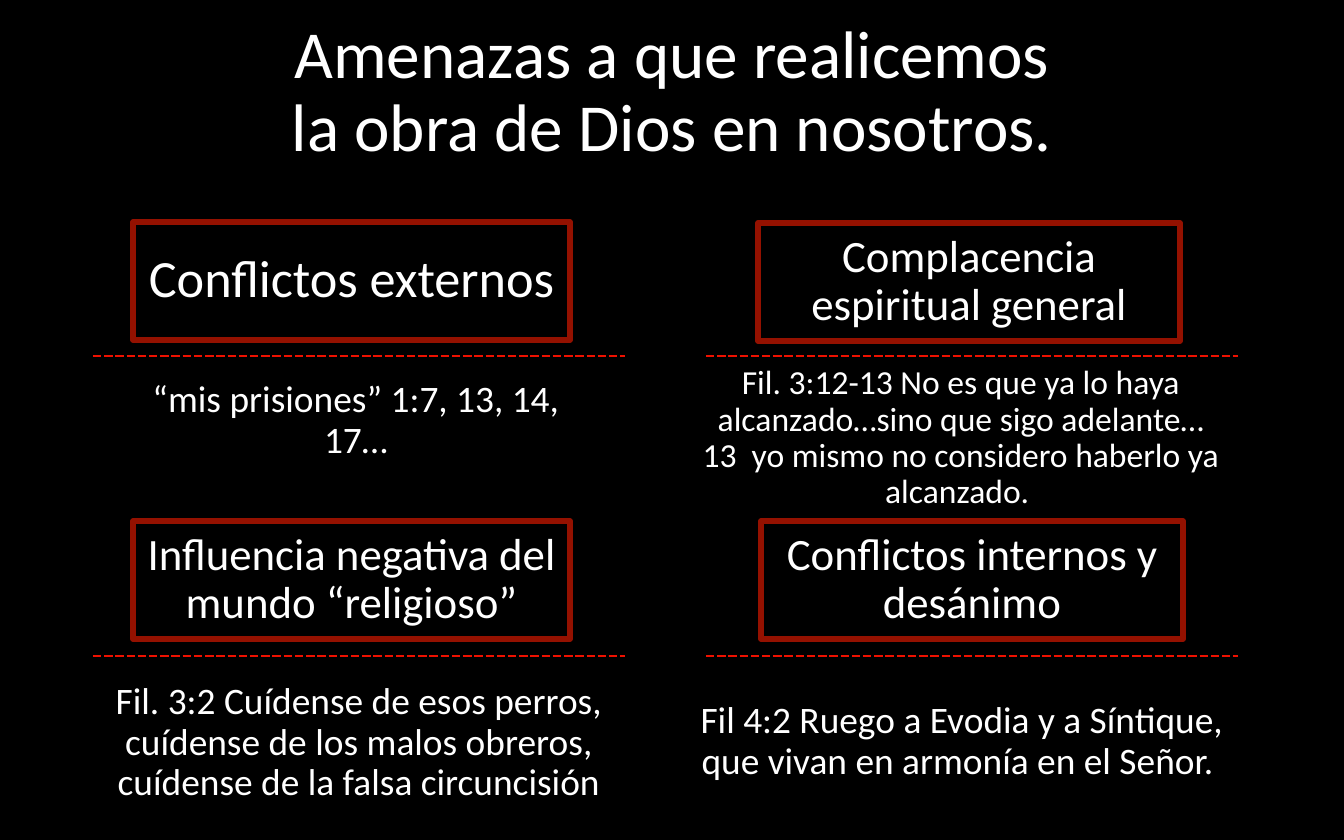
import dataclasses

import pptx
import pptx.dml.color
import pptx.enum.dml
import pptx.enum.shapes
import pptx.enum.text
import pptx.oxml
import pptx.oxml.ns
import pptx.util

EMU_PER_PX = 914400 / 134.4


@dataclasses.dataclass(frozen=True)
class Theme:
    font: str = "Calibri"
    background: str = "000000"
    text: str = "FFFFFF"
    frame: str = "941100"
    divider: str = "EE1100"
    title_size: int = 36
    frame_width: float = 3
    divider_width: float = 1.5
    line_spacing: float = 0.9
    space_before: float = 7.5


THEME = Theme()
DIVIDER_LENGTH = 532
HEADING_HEIGHT = 118

# heading and verse: (text, type size, (left, top, width[, height]));
# divider: (left, top)
THREATS = [
    {
        "heading": ("Conflictos externos", 28, (133, 222, 437)),
        "divider": (93, 356),
        "verse": (["“mis prisiones” 1:7, 13, 14, 17…"], 20, (106, 366, 500, 110)),
    },
    {
        "heading": ("Complacencia espiritual general", 24, (758, 223, 422)),
        "divider": (706, 356),
        "verse": (
            [
                "Fil. 3:12-13 No es que ya lo haya alcanzado…sino que sigo adelante…",
                "13  yo mismo no considero haberlo ya alcanzado. ",
            ],
            18,
            (685, 364, 552, 149),
        ),
    },
    {
        "heading": ("Influencia negativa del mundo “religioso”", 24, (133, 521, 437)),
        "divider": (93, 656),
        "verse": (
            [
                "Fil. 3:2 Cuídense de esos perros, cuídense de los malos obreros, "
                "cuídense de la falsa circuncisión"
            ],
            20,
            (93, 665, 532, 156),
        ),
    },
    {
        "heading": ("Conflictos internos y desánimo", 24, (761, 521, 422)),
        "divider": (706, 656),
        "verse": (
            ["Fil 4:2 Ruego a Evodia y a Síntique, que vivan en armonía en el Señor. "],
            20,
            (685, 664, 554, 156),
        ),
    },
]


def px(length):
    return pptx.util.Emu(round(length * EMU_PER_PX))


def rgb(value):
    return pptx.dml.color.RGBColor.from_string(value)


def apply(target, formats):
    for attribute, value in formats.items():
        setattr(target, attribute, value)


def write(frame, paragraphs, size, space_before=0):
    """Fill a text frame with centred paragraphs in the theme's style."""
    apply(frame, {
        "word_wrap": True,
        "auto_size": pptx.enum.text.MSO_AUTO_SIZE.NONE,
        "vertical_anchor": pptx.enum.text.MSO_ANCHOR.MIDDLE,
    })
    frame.text = "\n".join(paragraphs)
    for paragraph in frame.paragraphs:
        apply(paragraph, {
            "alignment": pptx.enum.text.PP_ALIGN.CENTER,
            "line_spacing": THEME.line_spacing,
            "space_before": pptx.util.Pt(space_before),
        })
        for run in paragraph.runs:
            apply(run.font, {"name": THEME.font, "size": pptx.util.Pt(size)})
            run.font.color.rgb = rgb(THEME.text)


def set_title(slide, text, box):
    title = slide.shapes.title
    apply(title, dict(zip(("left", "top", "width", "height"), map(px, box))))
    write(title.text_frame, [text], THEME.title_size)


def add_heading(slide, text, size, box):
    rectangle = pptx.enum.shapes.MSO_SHAPE.RECTANGLE
    heading = slide.shapes.add_shape(rectangle, *map(px, (*box, HEADING_HEIGHT)))
    heading.shadow.inherit = False
    heading.fill.background()
    heading.line.color.rgb = rgb(THEME.frame)
    heading.line.width = pptx.util.Pt(THEME.frame_width)
    write(heading.text_frame, [text], size, THEME.space_before)


def add_divider(slide, left, top):
    divider = slide.shapes.add_connector(
        pptx.enum.shapes.MSO_CONNECTOR.STRAIGHT,
        *map(px, (left, top, left + DIVIDER_LENGTH, top)),
    )
    divider.line.color.rgb = rgb(THEME.divider)
    apply(divider.line, {
        "width": pptx.util.Pt(THEME.divider_width),
        "dash_style": pptx.enum.dml.MSO_LINE.SQUARE_DOT,
    })
    properties = divider.element.find(pptx.oxml.ns.qn("p:spPr"))
    properties.append(
        pptx.oxml.parse_xml(f"<a:effectLst {pptx.oxml.ns.nsdecls('a')}/>")
    )


def add_verse(slide, paragraphs, size, box):
    verse = slide.shapes.add_textbox(*map(px, box))
    space_before = THEME.space_before if len(paragraphs) == 1 else 0
    write(verse.text_frame, paragraphs, size, space_before)


def main():
    presentation = pptx.Presentation()
    apply(presentation, {"slide_width": px(1344), "slide_height": px(840)})
    slide = presentation.slides.add_slide(
        presentation.slide_layouts.get_by_name("Title Only")
    )
    slide.background.fill.solid()
    slide.background.fill.fore_color.rgb = rgb(THEME.background)

    set_title(
        slide,
        "Amenazas a que realicemos\vla obra de Dios en nosotros.",
        (93, 12, 1158, 163),
    )
    for threat in THREATS:
        add_heading(slide, *threat["heading"])
        add_divider(slide, *threat["divider"])
        add_verse(slide, *threat["verse"])
    presentation.save("out.pptx")


if __name__ == "__main__":
    main()
